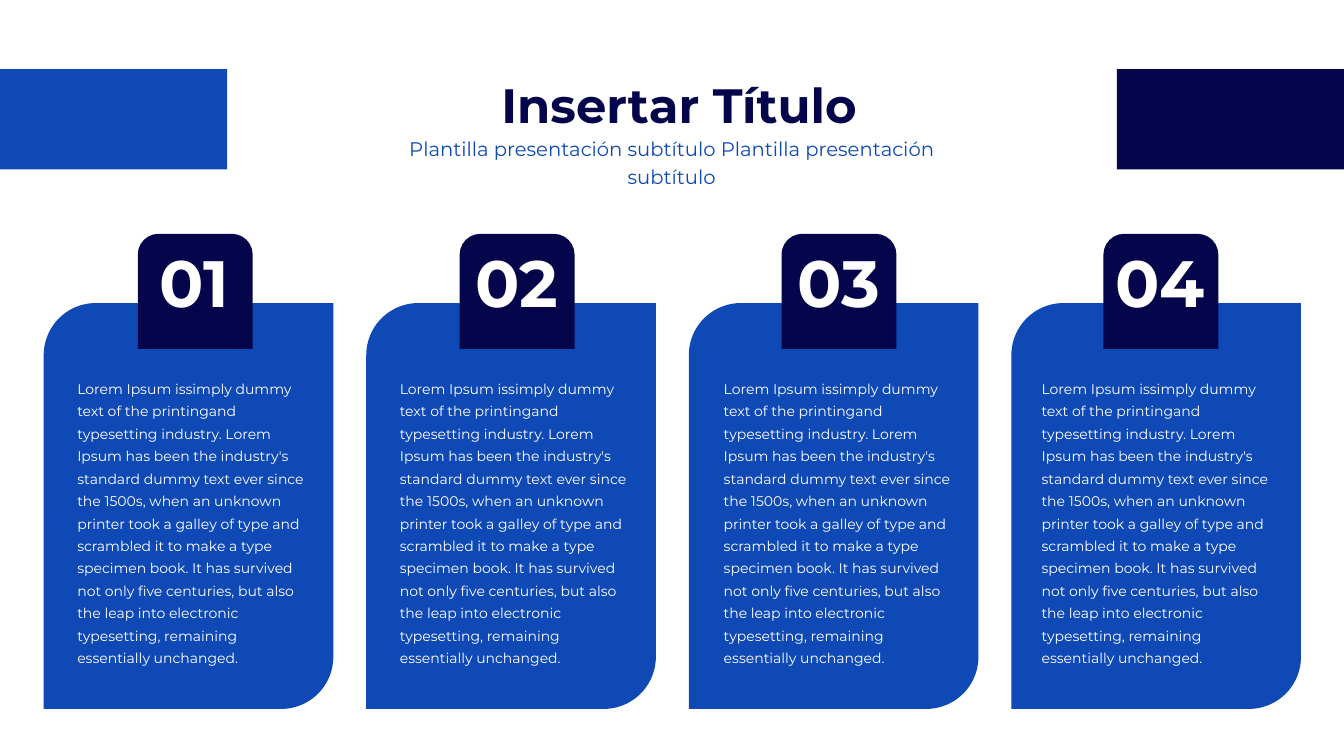
"""Build a slide with a title band and four numbered text cards."""
from pptx import Presentation
from pptx.dml.color import RGBColor
from pptx.enum import shapes, text
from pptx.util import Inches, Pt

BLUE = RGBColor(0x0F, 0x49, 0xB6)
NAVY = RGBColor(0x05, 0x05, 0x4B)
WHITE = RGBColor(0xFF, 0xFF, 0xFF)
FONT = "Montserrat"
CARD_LEFT, CARD_PITCH = 0.65, 4.8
TAB_LEFT, TAB_PITCH = 2.05, 4.79
BODY = (
    "Lorem Ipsum issimply dummy text of the printingand typesetting industry. "
    "Lorem Ipsum has been the industry's standard dummy text ever since the 1500s, "
    "when an unknown printer took a galley of type and scrambled it to make a type "
    "specimen book. It has survived not only ﬁve centuries, but also the leap into "
    "electronic typesetting, remaining essentially unchanged."
)
# number, number left, number width, body left, body width
CARDS = [
    ("01", 2.37, 1.08, 1.15, 3.42),
    ("02", 7.07, 1.27, 5.95, 3.42),
    ("03", 11.87, 1.28, 10.77, 3.42),
    ("04", 16.6, 1.37, 15.5, 3.46),
]


def place(shape, left, top, width, height):
    """Move and size a shape, in inches."""
    shape.left, shape.top = Inches(left), Inches(top)
    shape.width, shape.height = Inches(width), Inches(height)


def write(box, words, size, line, color, bold=False, align=text.PP_ALIGN.LEFT, wrap=True):
    """Write one formatted paragraph into a box without margins."""
    frame = box.text_frame
    frame.text = words
    frame.word_wrap = wrap
    frame.auto_size = text.MSO_AUTO_SIZE.NONE
    frame.vertical_anchor = text.MSO_ANCHOR.TOP
    frame.margin_left = frame.margin_right = frame.margin_top = frame.margin_bottom = 0
    paragraph = frame.paragraphs[0]
    paragraph.alignment = align
    paragraph.line_spacing = Pt(line)
    paragraph.space_before = Pt(0)
    font = paragraph.runs[0].font
    font.name, font.size, font.bold = FONT, Pt(size), bold
    font.color.rgb = color


def add_block(page, kind, left, top, width, height, color, corners=()):
    """Add a plain filled shape with the given corner adjustments."""
    block = page.shapes.add_shape(
        kind, Inches(left), Inches(top), Inches(width), Inches(height))
    block.shadow.inherit = False
    block.fill.solid()
    block.fill.fore_color.rgb = color
    block.line.fill.background()
    for index, corner in enumerate(corners):
        block.adjustments[index] = corner


def add_text(page, left, top, width, height, *args, **options):
    """Add a text box and write into it."""
    box = page.shapes.add_textbox(
        Inches(left), Inches(top), Inches(width), Inches(height))
    write(box, *args, **options)


def add_heading(page):
    """Fill the title and subtitle between the two side bands."""
    kind = shapes.MSO_SHAPE.RECTANGLE
    add_block(page, kind, 0, 1.03, 3.38, 1.49, BLUE)
    add_block(page, kind, 16.62, 1.03, 3.38, 1.49, NAVY)
    title, subtitle = page.placeholders
    place(title, 4.82, 1.3, 10.57, 0.73)
    write(title, "Insertar Título", 51.6, 49.4, NAVY, bold=True,
          align=text.PP_ALIGN.CENTER)
    place(subtitle, 5.4, 1.98, 9.19, 0.39)
    write(subtitle, "Plantilla presentación subtítulo Plantilla presentación subtítulo",
          21, 29.4, BLUE, align=text.PP_ALIGN.CENTER)


def add_card(page, index, number, number_left, number_width, body_left, body_width):
    """Add one card with its number tab and text."""
    add_block(page, shapes.MSO_SHAPE.ROUND_2_DIAG_RECTANGLE,
              CARD_LEFT + CARD_PITCH * index, 4.51, 4.31, 6.04, BLUE, (0.18, 0))
    add_block(page, shapes.MSO_SHAPE.ROUND_2_SAME_RECTANGLE,
              TAB_LEFT + TAB_PITCH * index, 3.48, 1.71, 1.71, NAVY, (0.18, 0))
    add_text(page, number_left, 4.28, number_width, 0.66, number, 70.1, 35, WHITE,
             bold=True, wrap=False)
    add_text(page, body_left, 5.58, body_width, 4.32, BODY, 15, 24, WHITE)


def main():
    """Build and save the deck."""
    deck = Presentation()
    deck.slide_width, deck.slide_height = Inches(20), Inches(11.25)
    page = deck.slides.add_slide(deck.slide_layouts[0])
    add_heading(page)
    for index, card in enumerate(CARDS):
        add_card(page, index, *card)
    deck.save("out.pptx")


if __name__ == "__main__":
    main()
